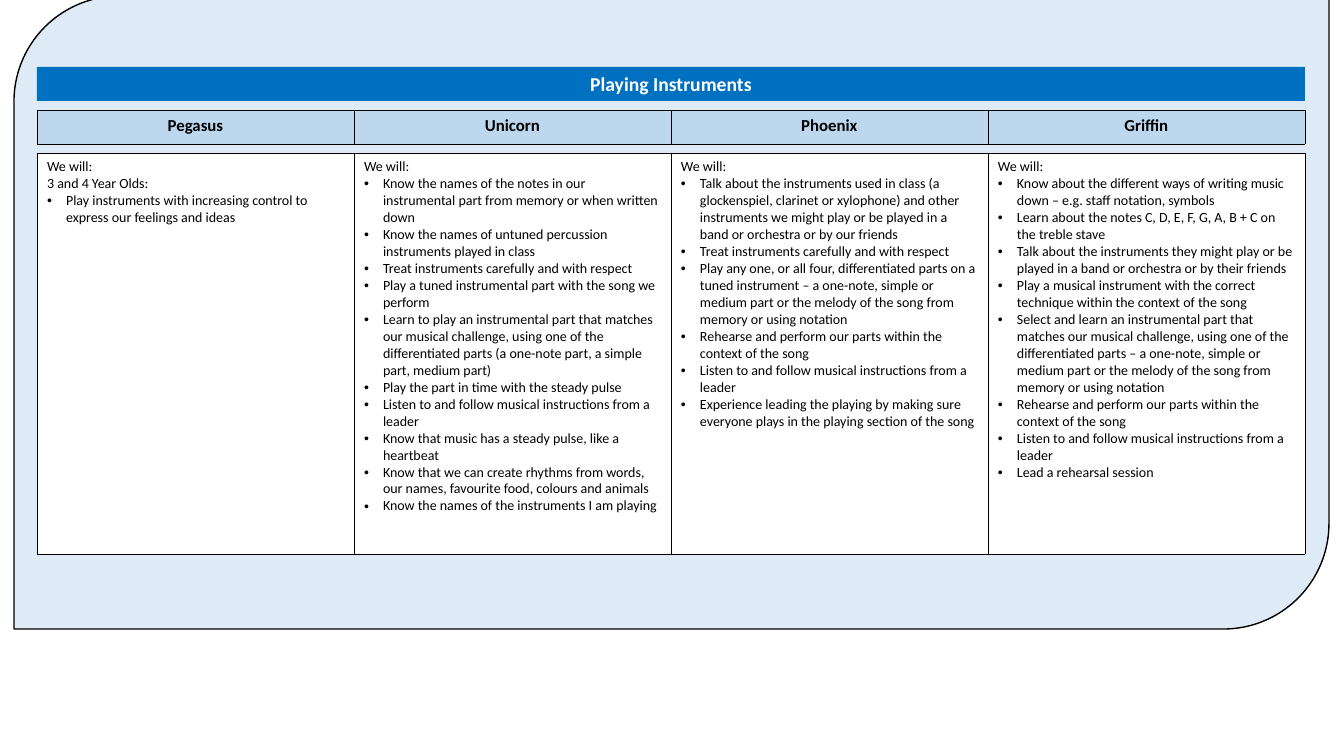
from lxml.etree import SubElement
from pptx import Presentation
from pptx.dml.color import RGBColor
from pptx.enum.shapes import MSO_SHAPE
from pptx.enum.text import MSO_ANCHOR, MSO_AUTO_SIZE, PP_ALIGN
from pptx.oxml import parse_xml
from pptx.oxml.ns import nsdecls, qn
from pptx.util import Pt

SCALE = 914400 / 100.8
INDENT = 19

GROUPS = {
    "Pegasus": [
        "We will:",
        "3 and 4 Year Olds:",
        "• Play instruments with increasing control to express our feelings and ideas",
    ],
    "Unicorn": [
        "We will:",
        "• Know the names of the notes in our instrumental part from memory or when written down",
        "• Know the names of untuned percussion instruments played in class",
        "• Treat instruments carefully and with respect",
        "• Play a tuned instrumental part with the song we perform",
        "• Learn to play an instrumental part that matches our musical challenge, using one of the "
        "differentiated parts (a one-note part, a simple part, medium part)",
        "• Play the part in time with the steady pulse",
        "• Listen to and follow musical instructions from a leader",
        "• Know that music has a steady pulse, like a heartbeat",
        "• Know that we can create rhythms from words, our names, favourite food, colours and animals",
        "• Know the names of the instruments I am playing",
    ],
    "Phoenix": [
        "We will:",
        "• Talk about the instruments used in class (a glockenspiel, clarinet or xylophone) and other "
        "instruments we might play or be played in a band or orchestra or by our friends",
        "• Treat instruments carefully and with respect",
        "• Play any one, or all four, differentiated parts on a tuned instrument – a one-note, simple "
        "or medium part or the melody of the song from memory or using notation",
        "• Rehearse and perform our parts within the context of the song",
        "• Listen to and follow musical instructions from a leader",
        "• Experience leading the playing by making sure everyone plays in the playing section of the song",
    ],
    "Griffin": [
        "We will:",
        "• Know about the different ways of writing music down – e.g. staff notation, symbols",
        "• Learn about the notes C, D, E, F, G, A, B + C on the treble stave",
        "• Talk about the instruments they might play or be played in a band or orchestra or by their friends",
        "• Play a musical instrument with the correct technique within the context of the song",
        "• Select and learn an instrumental part that matches our musical challenge, using one of the "
        "differentiated parts – a one-note, simple or medium part or the melody of the song from "
        "memory or using notation",
        "• Rehearse and perform our parts within the context of the song",
        "• Listen to and follow musical instructions from a leader",
        "• Lead a rehearsal session",
    ],
}


def px(n):
    return round(n * SCALE)


def paint(fill, color):
    fill.solid()
    fill.fore_color.rgb = RGBColor.from_string(color)


def write(frame, lines, size=10, color="000000", bold=False, align=PP_ALIGN.LEFT):
    """Fill a text frame; lines that begin with a bullet get a hanging indent."""
    for i, line in enumerate(lines):
        para = frame.paragraphs[0] if i == 0 else frame.add_paragraph()
        para.alignment = align
        para.line_spacing = 1.0
        if line.startswith("• "):
            props = para._p.get_or_add_pPr()
            props.set("marL", str(px(INDENT)))
            props.set("indent", str(-px(INDENT)))
            SubElement(props, qn("a:buFont"), typeface="Arial")
            SubElement(props, qn("a:buChar"), char="•")
        run = para.add_run()
        run.text = line.removeprefix("• ")
        font = run.font
        font.name, font.size, font.bold = "Calibri", Pt(size), bold
        font.color.rgb = RGBColor.from_string(color)


def border(cell):
    props = cell._tc.get_or_add_tcPr()
    for side in "LRTB":
        props.append(parse_xml(
            f'<a:ln{side} {nsdecls("a")} w="{Pt(0.5)}"><a:solidFill>'
            f'<a:srgbClr val="000000"/></a:solidFill></a:ln{side}>'))


def panel(slide, x, y, w, h):
    shape = slide.shapes.add_shape(
        MSO_SHAPE.ROUND_2_DIAG_RECTANGLE, px(x), px(y), px(w), px(h))
    shape.shadow.inherit = False
    paint(shape.fill, "DEEBF7")
    paint(shape.line.fill, "000000")
    shape.line.width = Pt(1)


def banner(slide, text, x, y, w, h):
    """Place the title as a filled bar in front of the panel."""
    title = slide.shapes.title
    slide.shapes._spTree.append(title._element)
    title.left, title.top, title.width, title.height = map(px, (x, y, w, h))
    paint(title.fill, "0070C0")
    frame = title.text_frame
    frame.auto_size = MSO_AUTO_SIZE.NONE
    frame.vertical_anchor = MSO_ANCHOR.MIDDLE
    frame.margin_top = frame.margin_bottom = px(5)
    write(frame, [text], size=14, color="FFFFFF", bold=True, align=PP_ALIGN.CENTER)


def strip(slide, texts, x, y, w, h, fill="FFFFFF", **style):
    """Add a one-row table with a cell of equal width for each list of lines."""
    table = slide.shapes.add_table(1, len(texts), px(x), px(y), px(w), px(h)).table
    table.first_row = table.horz_banding = False
    for col, cell, lines in zip(table.columns, table.rows[0].cells, texts):
        col.width = px(w / len(texts))
        border(cell)
        paint(cell.fill, fill)
        write(cell.text_frame, lines, **style)


def main():
    deck = Presentation()
    deck.slide_width, deck.slide_height = px(1344), px(756)
    slide = deck.slides.add_slide(deck.slide_layouts[5])
    left, wide = 37, 1268
    panel(slide, 14, -4, 1315, 633)
    banner(slide, "Playing Instruments", left, 67, wide, 34)
    strip(slide, [[name] for name in GROUPS], left, 110, wide, 34,
          fill="BDD7EE", size=12, bold=True, align=PP_ALIGN.CENTER)
    strip(slide, GROUPS.values(), left, 153, wide, 401)
    deck.save("out.pptx")


if __name__ == "__main__":
    main()
